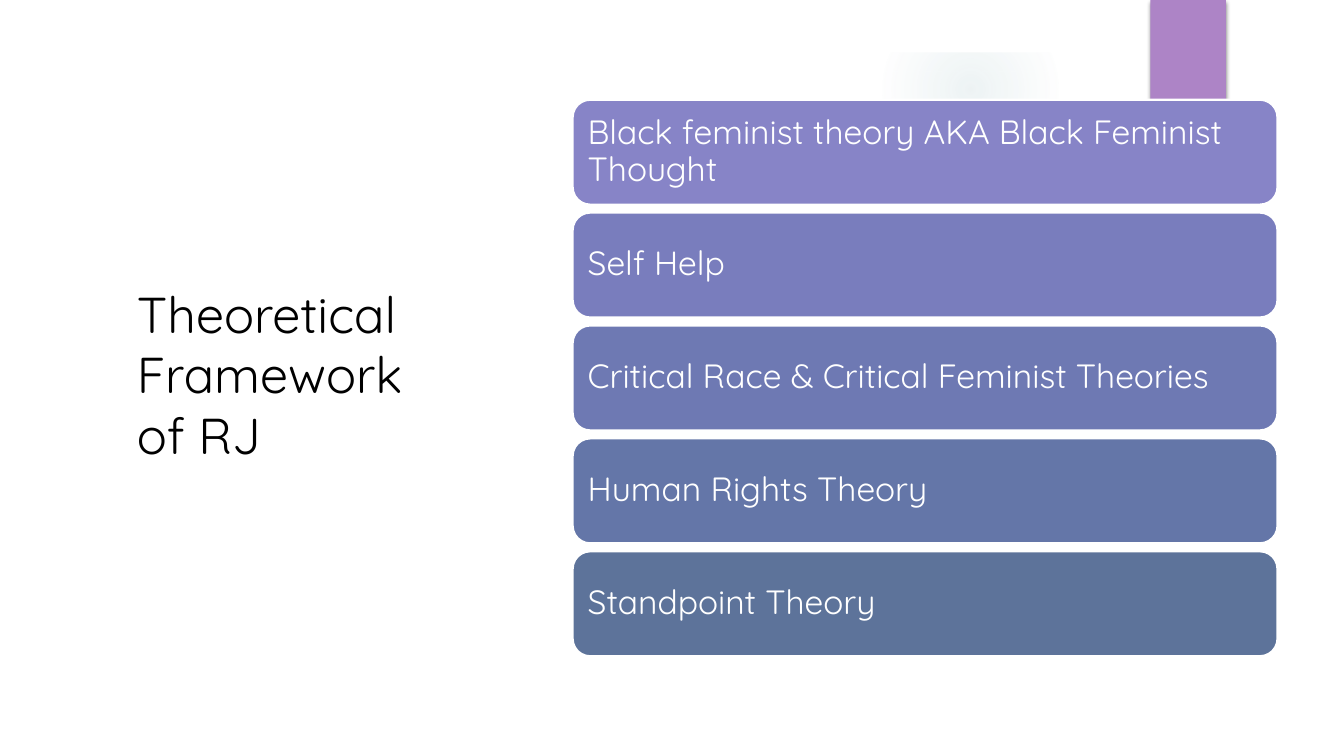
import pptx
import pptx.util
import pptx.dml.color
import pptx.enum.shapes
import pptx.enum.text
import pptx.oxml
import pptx.oxml.ns

Inches, Pt = pptx.util.Inches, pptx.util.Pt
SHAPE = pptx.enum.shapes.MSO_SHAPE

# Content
TITLE = "Theoretical Framework of RJ"
THEORIES = [
    ("Black feminist theory AKA Black Feminist Thought", "8784C7"),
    ("Self Help", "797DBD"),
    ("Critical Race & Critical Feminist Theories", "6E79B3"),
    ("Human Rights Theory", "6476A8"),
    ("Standpoint Theory", "5D739A"),
]

THEME = {
    "font": "Quicksand", "title_size": 36, "card_size": 24,
    "black": "000000", "white": "FFFFFF", "accent": "AD84C6", "glow": "84ACB6",
}
GLOW_STOPS = [(0, 14), (36, 7), (73, 0)]  # position %, opacity %

# Layout in inches
SLIDE_W, SLIDE_H, MARGIN = 13.33, 7.5, 0.52
CARD_LEFT, CARD_TOP, CARD_W, CARD_H, CARD_STEP = 5.68, 0.99, 6.99, 1.04, 1.12


def rgb(color):
    return pptx.dml.color.RGBColor.from_string(color)


def add_shape(slide, kind, box, fill, line=None):
    s = slide.shapes.add_shape(kind, *map(Inches, box))
    s.shadow.inherit = False
    s.fill.solid()
    s.fill.fore_color.rgb = rgb(fill)
    if line:
        s.line.color.rgb = rgb(line)
        s.line.width = Pt(1.5)
    else:
        s.line.fill.background()
    return s


def write_text(s, text, *, size, color, inset=(0.1, 0.05), spacing=None):
    tf = s.text_frame
    tf.word_wrap = True
    tf.vertical_anchor = pptx.enum.text.MSO_ANCHOR.MIDDLE
    tf.margin_left = tf.margin_right = Inches(inset[0])
    tf.margin_top = tf.margin_bottom = Inches(inset[1])
    p = tf.paragraphs[0]
    p.alignment = pptx.enum.text.PP_ALIGN.LEFT
    if spacing:
        p.line_spacing = spacing
    r = p.add_run()
    r.text = text
    r.font.name = THEME["font"]
    r.font.size = Pt(size)
    r.font.color.rgb = rgb(color)


def xml(body):
    return pptx.oxml.parse_xml(body.replace(">", f" {pptx.oxml.ns.nsdecls('a')}>", 1))


def set_glow(s, color, stops):
    marks = "".join(
        f'<a:gs pos="{pos * 1000}"><a:srgbClr val="{color}">'
        f'<a:alpha val="{alpha * 1000}"/></a:srgbClr></a:gs>'
        for pos, alpha in stops)
    gradient = xml(
        f'<a:gradFill><a:gsLst>{marks}</a:gsLst><a:path path="circle">'
        '<a:fillToRect l="50000" t="50000" r="50000" b="50000"/></a:path></a:gradFill>')
    solid = s.element.spPr.find(pptx.oxml.ns.qn("a:solidFill"))
    solid.getparent().replace(solid, gradient)


def set_shadow(s, color, alpha, blur, distance, angle):
    effects = s.element.spPr.find(pptx.oxml.ns.qn("a:effectLst"))
    effects.append(xml(
        f'<a:outerShdw blurRad="{Pt(blur)}" dist="{Pt(distance)}" dir="{angle * 60000}" '
        f'algn="ctr" rotWithShape="0"><a:srgbClr val="{color}">'
        f'<a:alpha val="{alpha * 1000}"/></a:srgbClr></a:outerShdw>'))


def main():
    prs = pptx.Presentation()
    prs.slide_width, prs.slide_height = Inches(SLIDE_W), Inches(SLIDE_H)
    slide = prs.slides.add_slide(prs.slide_layouts[6])

    # Soft glow, cut off by the white frame around the slide
    glow = add_shape(slide, SHAPE.OVAL, (8.75, 0.01, 1.75, 1.75), THEME["glow"])
    set_glow(glow, THEME["glow"], GLOW_STOPS)
    frame = add_shape(slide, SHAPE.FRAME, (0, 0, SLIDE_W, SLIDE_H), THEME["white"])
    frame.adjustments[0] = MARGIN / SLIDE_H

    # Accent tab
    tab = add_shape(slide, SHAPE.RECTANGLE, (11.41, 0, 0.75, 1.25), THEME["accent"])
    set_shadow(tab, THEME["black"], alpha=45, blur=3, distance=2, angle=90)

    # Title
    title = slide.shapes.add_textbox(*map(Inches, (1.26, 1.06, 3.22, 5.29)))
    write_text(title, TITLE, size=THEME["title_size"], color=THEME["black"])

    # Theory cards
    for i, (theory, fill) in enumerate(THEORIES):
        box = (CARD_LEFT, CARD_TOP + i * CARD_STEP, CARD_W, CARD_H)
        card = add_shape(slide, SHAPE.ROUNDED_RECTANGLE, box, fill, THEME["white"])
        write_text(card, theory, size=THEME["card_size"], color=THEME["white"],
                   inset=(0.1, 0.1), spacing=0.9)

    prs.save("out.pptx")


if __name__ == "__main__":
    main()
